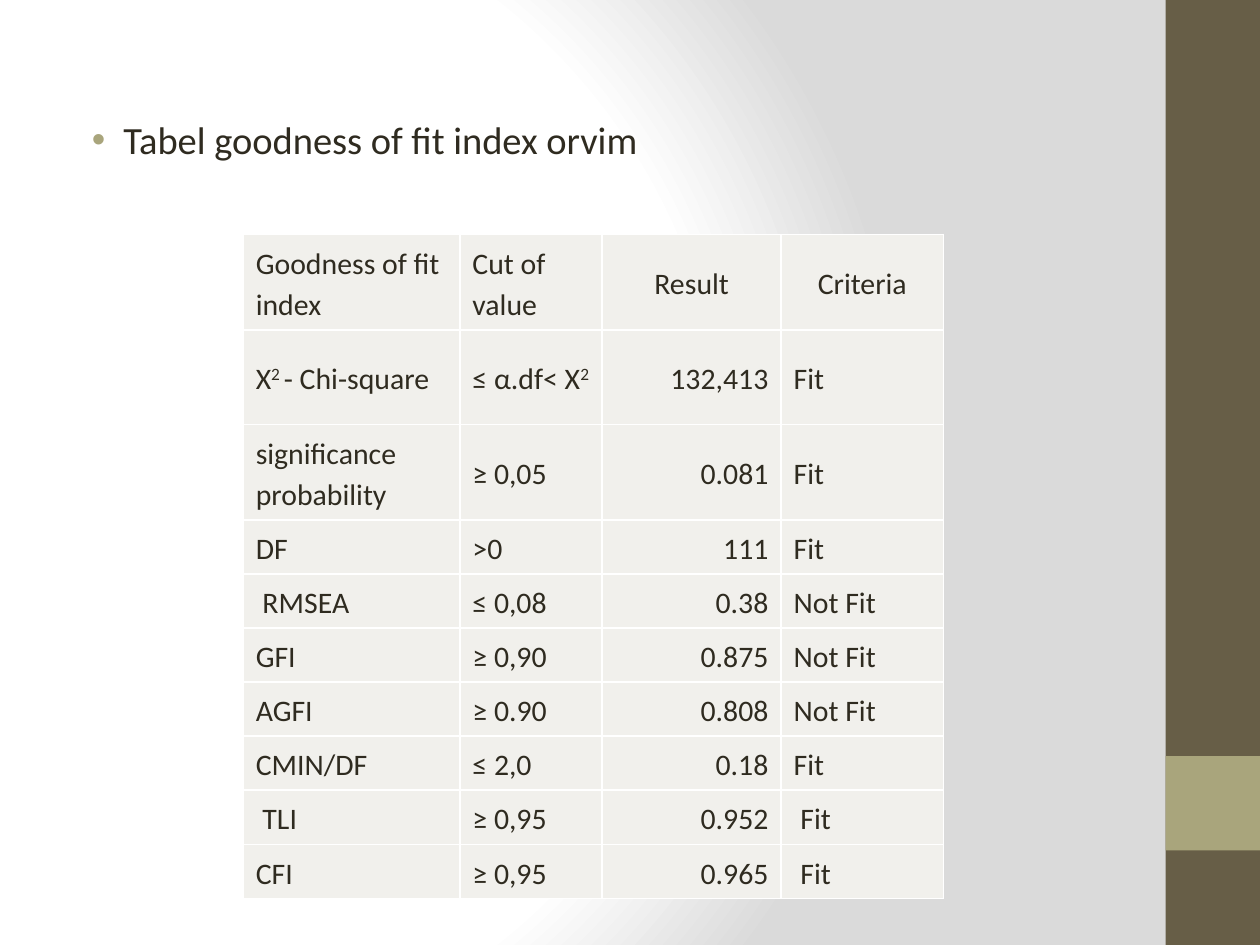
import pptx
import pptx.dml.color
import pptx.enum.shapes
import pptx.enum.text
import pptx.oxml
import pptx.oxml.ns
import pptx.util
from pptx.util import Inches

COLORS = {
    "ink": "2F2B20",
    "olive": "675E47",
    "sage": "A9A57C",
    "cell": "F1F0EC",
    "white": "FFFFFF",
    "grey": "DADADA",
}
ALIGN = pptx.enum.text.PP_ALIGN
HEADINGS = ["Goodness of fit index", "Cut of value", "Result", "Criteria"]
FIT_INDICES = [
    ["X^2 ^- Chi-square", "≤ α.df< X^2", "132,413", "Fit"],
    ["significance probability", "≥ 0,05", "0.081", "Fit"],
    ["DF", ">0", "111", "Fit"],
    [" RMSEA", "≤ 0,08", "0.38", "Not Fit"],
    ["GFI", "≥ 0,90", "0.875", "Not Fit"],
    ["AGFI", "≥ 0.90", "0.808", "Not Fit"],
    ["CMIN/DF", "≤ 2,0", "0.18", "Fit"],
    [" TLI", "≥ 0,95", "0.952", " Fit"],
    ["CFI", "≥ 0,95", "0.965", " Fit"],
]
HEADING_ALIGN = [ALIGN.LEFT, ALIGN.LEFT, ALIGN.CENTER, ALIGN.CENTER]
VALUE_ALIGN = [ALIGN.LEFT, ALIGN.LEFT, ALIGN.RIGHT, ALIGN.LEFT]
COLUMN_WIDTHS = [1.72, 1.13, 1.42, 1.29]
ROW_HEIGHTS = [0.75] * 3 + [0.42] * 7


def rgb(name):
    """Return the named colour."""
    return pptx.dml.color.RGBColor.from_string(COLORS[name])


def xml(markup):
    """Parse markup whose root element may use the a and p prefixes."""
    head, rest = markup.split(">", 1)
    closing = "/" if head.endswith("/") else ""
    declared = head.rstrip("/") + " " + pptx.oxml.ns.nsdecls("a", "p")
    return pptx.oxml.parse_xml(f"{declared}{closing}>{rest}")


def write(paragraph, text, size=17, color="ink", align=ALIGN.LEFT, spacing=None):
    """Write formatted text, raising every part enclosed in carets."""
    paragraph.alignment = align
    paragraph.line_spacing = spacing
    for position, part in enumerate(text.split("^")):
        if not part:
            continue
        run = paragraph.add_run()
        run.text = part
        run.font.name = "Calibri"
        run.font.size = pptx.util.Pt(size)
        run.font.color.rgb = rgb(color)
        if position % 2:
            run.font._element.set("baseline", "30000")


def paint_background(slide):
    """Fill the slide with a white glow that fades to grey."""
    stops = "".join(
        f'<a:gs pos="{position}"><a:srgbClr val="{COLORS[name]}"/></a:gs>'
        for position, name in [(0, "white"), (75000, "white"), (100000, "grey")]
    )
    slide._element.cSld.insert(0, xml(
        f'<p:bg><p:bgPr><a:gradFill rotWithShape="1"><a:gsLst>{stops}</a:gsLst>'
        '<a:path path="circle"><a:fillToRect l="20000" t="50000" r="100000" b="50000"/>'
        "</a:path></a:gradFill><a:effectLst/></p:bgPr></p:bg>"
    ))


def add_band(slide, top, height, color):
    """Add a plain block of the band along the right edge."""
    band = slide.shapes.add_shape(
        pptx.enum.shapes.MSO_SHAPE.RECTANGLE,
        Inches(9.25), Inches(top), Inches(0.75), Inches(height),
    )
    band.shadow.inherit = False
    band.fill.solid()
    band.fill.fore_color.rgb = rgb(color)
    band.line.fill.background()


def fill_body(body, text):
    """Place the body and write its single bullet."""
    body.left, body.top = Inches(0.5), Inches(0.44)
    body.width, body.height = Inches(8.33), Inches(6.56)
    frame = body.text_frame
    frame.auto_size = pptx.enum.text.MSO_AUTO_SIZE.NONE
    frame.margin_top = Inches(0.48)
    bullet = frame.paragraphs[0]
    write(bullet, text, size=22)
    properties = bullet._p.get_or_add_pPr()
    properties.set("marL", str(Inches(0.38)))
    properties.set("indent", str(-Inches(0.25)))
    properties.append(xml(f'<a:buClr><a:srgbClr val="{COLORS["sage"]}"/></a:buClr>'))
    properties.append(xml('<a:buFont typeface="Arial"/>'))
    properties.append(xml('<a:buChar char="•"/>'))


def fill_cell(cell, text, align):
    """Write one cell and give it its fill and white borders."""
    write(cell.text_frame.paragraphs[0], text, align=align, spacing=1.14)
    cell.vertical_anchor = pptx.enum.text.MSO_ANCHOR.MIDDLE
    cell.fill.solid()
    cell.fill.fore_color.rgb = rgb("cell")
    properties = cell._tc.get_or_add_tcPr()
    for position, side in enumerate("LRTB"):
        properties.insert(position, xml(
            f'<a:ln{side} w="12700"><a:solidFill><a:srgbClr val="{COLORS["white"]}"/>'
            f"</a:solidFill></a:ln{side}>"
        ))


def add_index_table(slide):
    """Add the table of fit indices."""
    rows = [HEADINGS] + FIT_INDICES
    index_table = slide.shapes.add_table(
        len(rows), len(HEADINGS), Inches(1.93), Inches(1.86),
        Inches(sum(COLUMN_WIDTHS)), Inches(sum(ROW_HEIGHTS)),
    ).table
    index_table.first_row = index_table.horz_banding = False
    for column, width in zip(index_table.columns, COLUMN_WIDTHS):
        column.width = Inches(width)
    for number, (row, height, texts) in enumerate(
        zip(index_table.rows, ROW_HEIGHTS, rows)
    ):
        row.height = Inches(height)
        aligns = VALUE_ALIGN if number else HEADING_ALIGN
        for cell, text, align in zip(row.cells, texts, aligns):
            fill_cell(cell, text, align)


def main():
    """Build the slide and save it."""
    deck = pptx.Presentation()
    deck.slide_width, deck.slide_height = Inches(10), Inches(7.5)
    slide = deck.slides.add_slide(deck.slide_layouts[1])
    heading = slide.shapes.title._element
    heading.getparent().remove(heading)
    paint_background(slide)
    add_band(slide, 0, 7.5, "olive")
    add_band(slide, 6, 0.75, "sage")
    fill_body(slide.placeholders[1], "Tabel goodness of fit index orvim")
    add_index_table(slide)
    deck.save("out.pptx")


if __name__ == "__main__":
    main()
